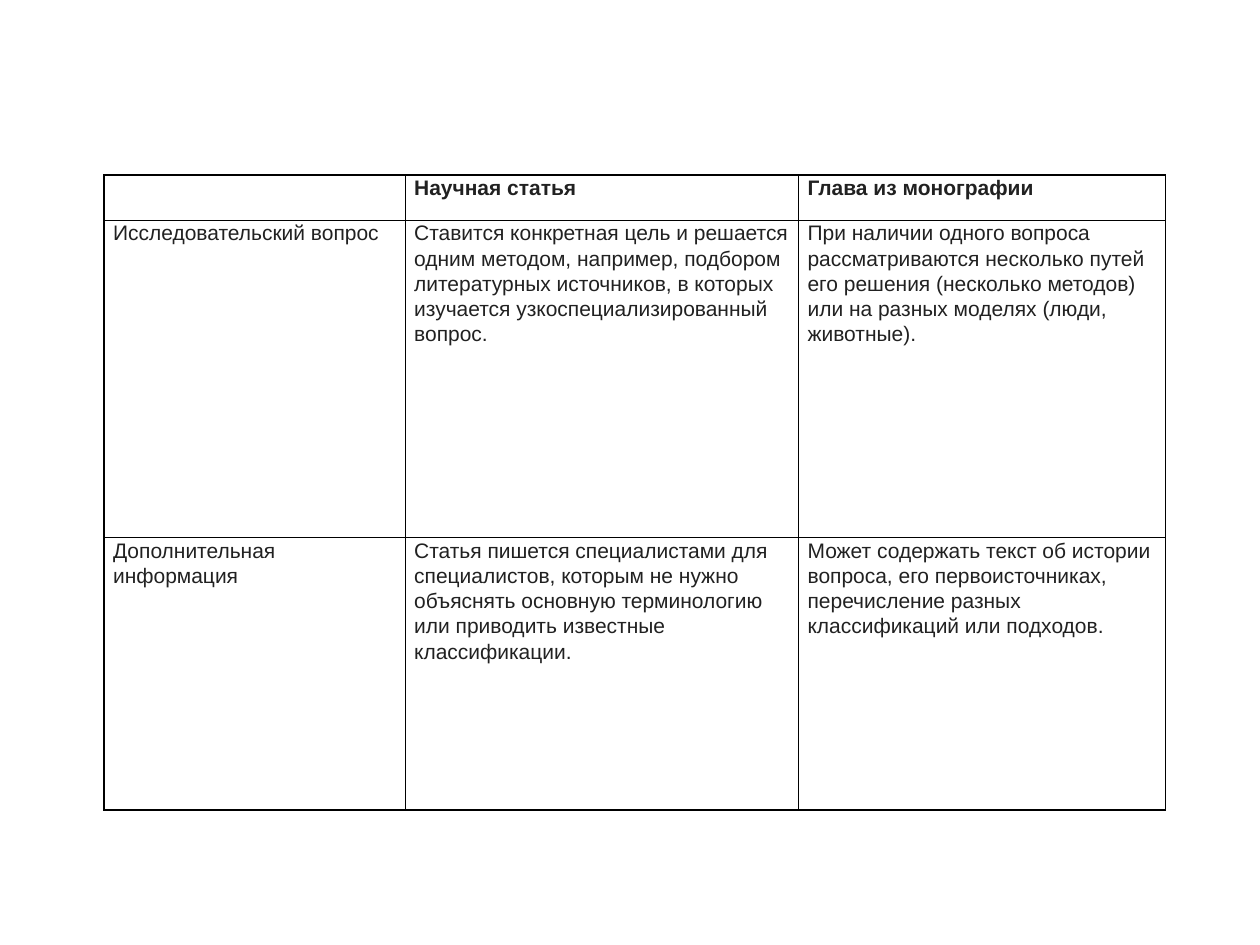
"""Build a slide with a table comparing a research article and a monograph chapter."""
from lxml import etree
from pptx import Presentation
from pptx import util as u
from pptx.dml.color import RGBColor
from pptx.oxml.ns import qn

COMPARISON = [
    ("", "Научная статья", "Глава из монографии"),
    (
        "Исследовательский вопрос",
        "Ставится конкретная цель и решается одним методом, например, подбором "
        "литературных источников, в которых изучается узкоспециализированный вопрос.",
        "При наличии одного вопроса рассматриваются несколько путей его решения "
        "(несколько методов) или на разных моделях (люди, животные).",
    ),
    (
        "Дополнительная информация",
        "Статья пишется специалистами для специалистов, которым не нужно объяснять "
        "основную терминологию или приводить известные классификации.",
        "Может содержать текст об истории вопроса, его первоисточниках, "
        "перечисление разных классификаций или подходов.",
    ),
]
COLUMN_WIDTHS = (6.07, 7.93, 7.4)
ROW_HEIGHTS = (0.91, 6.4, 5.49)
LEFT, TOP = 2.1, 3.53
TEXT_COLOUR, BORDER_COLOUR = "212121", "000000"


def colour(hex_value):
    return RGBColor.from_string(hex_value)


def add_borders(cell):
    properties = cell._tc.get_or_add_tcPr()
    for position, side in enumerate(("a:lnL", "a:lnR", "a:lnT", "a:lnB")):
        border = etree.Element(qn(side), w=str(u.Pt(1)))
        fill = etree.SubElement(border, qn("a:solidFill"))
        etree.SubElement(fill, qn("a:srgbClr"), val=BORDER_COLOUR)
        properties.insert(position, border)


def fill_cell(cell, wording, is_header):
    cell.margin_left = cell.margin_right = u.Cm(0.18)
    cell.margin_top = cell.margin_bottom = 0
    cell.fill.background()
    add_borders(cell)
    cell.text = wording
    paragraph = cell.text_frame.paragraphs[0]
    paragraph.line_spacing = 1.07
    paragraph.space_after = u.Pt(8)
    for font in [paragraph.font] + [run.font for run in paragraph.runs]:
        font.name = "Arial"
        font.size = u.Pt(12)
        font.bold = is_header
        font.color.rgb = colour(TEXT_COLOUR)


def main():
    deck = Presentation()
    deck.slide_width, deck.slide_height = u.Cm(25.4), u.Cm(19.05)
    slide = deck.slides.add_slide(deck.slide_layouts[6])
    table = slide.shapes.add_table(
        len(ROW_HEIGHTS), len(COLUMN_WIDTHS), u.Cm(LEFT), u.Cm(TOP),
        u.Cm(sum(COLUMN_WIDTHS)), u.Cm(sum(ROW_HEIGHTS)),
    ).table
    table.horz_banding = False
    table.first_row = False
    for column, width in zip(table.columns, COLUMN_WIDTHS):
        column.width = u.Cm(width)
    for row, height, wordings in zip(table.rows, ROW_HEIGHTS, COMPARISON):
        row.height = u.Cm(height)
        for cell, wording in zip(row.cells, wordings):
            fill_cell(cell, wording, wordings is COMPARISON[0])
    deck.save("out.pptx")


if __name__ == "__main__":
    main()
